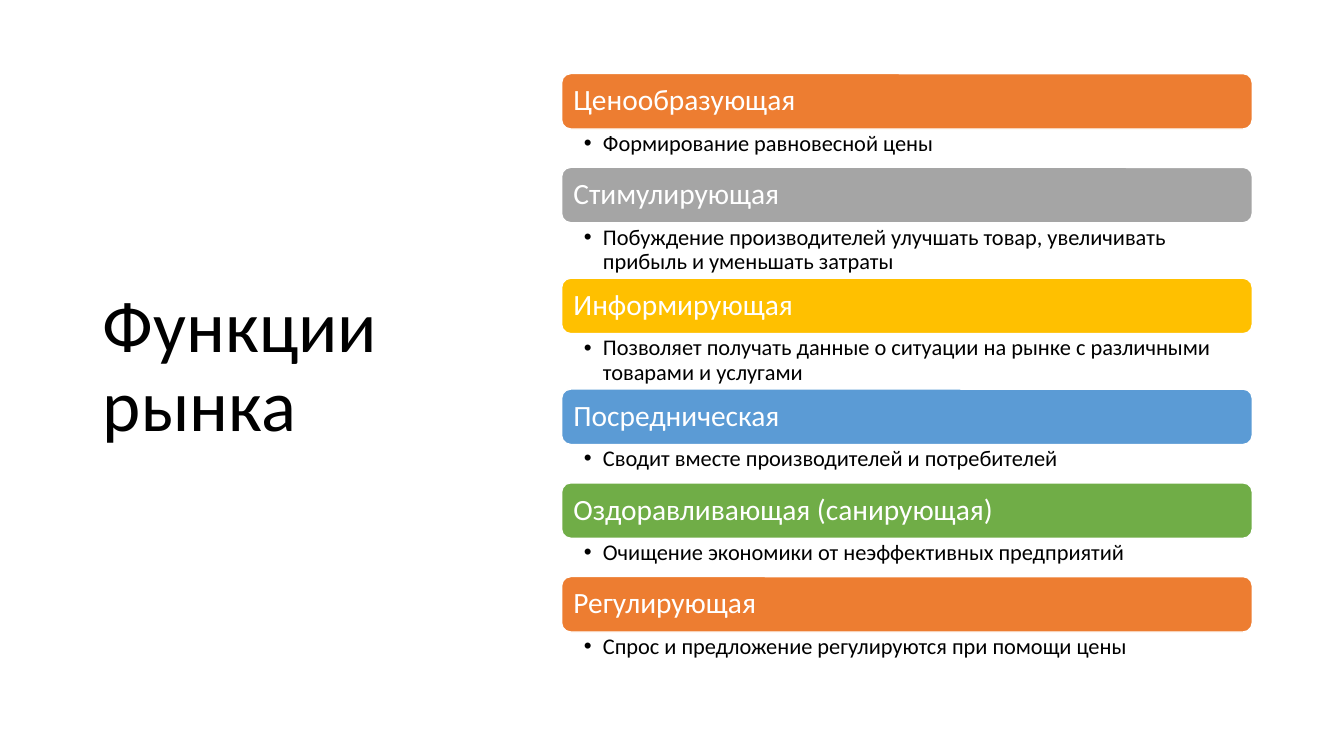
from lxml import etree
from pptx import Presentation
from pptx.dml.color import RGBColor
from pptx.enum import shapes, text
from pptx.oxml import ns
from pptx.util import Inches, Pt

COLORS = {
    "orange": "ED7D31", "gray": "A5A5A5", "yellow": "FFC000",
    "blue": "5B9BD5", "green": "70AD47", "white": "FFFFFF", "black": "000000",
}
LEFT, TOP, WIDTH = 5.57, 0.73, 6.85
BAR_HEIGHT = 0.55
DETAIL_HEIGHTS = {1: 0.38, 2: 0.55}  # by number of text lines

# Function of the market, bar colour, explanation, lines it takes
FUNCTIONS = [
    ("Ценообразующая", "orange", "Формирование равновесной цены", 1),
    ("Стимулирующая", "gray",
     "Побуждение производителей улучшать товар, увеличивать прибыль и уменьшать затраты", 2),
    ("Информирующая", "yellow",
     "Позволяет получать данные о ситуации на рынке с различными товарами и услугами", 2),
    ("Посредническая", "blue", "Сводит вместе производителей и потребителей", 1),
    ("Оздоравливающая (санирующая)", "green",
     "Очищение экономики от неэффективных предприятий", 1),
    ("Регулирующая", "orange", "Спрос и предложение регулируются при помощи цены", 1),
]


def color(name):
    return RGBColor.from_string(COLORS[name])


def write(box, words, size, color_name, anchor, margins):
    """Fill a shape with one left-aligned paragraph and return it."""
    frame = box.text_frame
    left, top, right, bottom = (Inches(margin) for margin in margins)
    frame_format = {
        "word_wrap": True, "auto_size": text.MSO_AUTO_SIZE.NONE,
        "vertical_anchor": anchor, "margin_left": left, "margin_top": top,
        "margin_right": right, "margin_bottom": bottom,
    }
    for name, value in frame_format.items():
        setattr(frame, name, value)
    para = frame.paragraphs[0]
    para.alignment = text.PP_ALIGN.LEFT
    para.line_spacing = 0.9
    span = para.add_run()
    span.text = words
    for name, value in {"name": "Calibri", "size": Pt(size)}.items():
        setattr(span.font, name, value)
    span.font.color.rgb = color(color_name)
    return para


def add_title(page, words):
    title = page.shapes.title
    place = {"left": 0.92, "top": 0.61, "width": 3.69, "height": 6.09}
    for name, value in place.items():
        setattr(title, name, Inches(value))
    write(title, words, 52, "black", text.MSO_ANCHOR.MIDDLE, (0.1, 0.05, 0.1, 0.05))


def add_bar(page, top, words, color_name):
    bar = page.shapes.add_shape(
        shapes.MSO_SHAPE.ROUNDED_RECTANGLE,
        Inches(LEFT), Inches(top), Inches(WIDTH), Inches(BAR_HEIGHT))
    bar.shadow.inherit = False
    bar.fill.solid()
    bar.fill.fore_color.rgb = color(color_name)
    bar.line.color.rgb = color("white")
    bar.line.width = Pt(1)
    write(bar, words, 21, "white", text.MSO_ANCHOR.MIDDLE, (0.09,) * 4)


def add_detail(page, top, height, words):
    box = page.shapes.add_textbox(
        Inches(LEFT), Inches(top), Inches(WIDTH), Inches(height))
    para = write(box, words, 16, "black", text.MSO_ANCHOR.TOP, (0.22, 0.03, 0.16, 0.03))
    para.level = 1
    # Hanging bullet
    properties = para._p.get_or_add_pPr()
    properties.set("marL", str(Inches(0.19)))
    properties.set("indent", str(-Inches(0.19)))
    etree.SubElement(properties, ns.qn("a:buFont")).set("typeface", "Arial")
    etree.SubElement(properties, ns.qn("a:buChar")).set("char", "•")


def main():
    deck = Presentation()
    deck.slide_width, deck.slide_height = Inches(13.33), Inches(7.5)
    page = deck.slides.add_slide(deck.slide_layouts.get_by_name("Title Only"))
    add_title(page, "Функции рынка")

    # Stack each bar and its explanation down the right side
    top = TOP
    for name, color_name, detail, lines in FUNCTIONS:
        add_bar(page, top, name, color_name)
        top += BAR_HEIGHT
        add_detail(page, top, DETAIL_HEIGHTS[lines], detail)
        top += DETAIL_HEIGHTS[lines]

    deck.save("out.pptx")


if __name__ == "__main__":
    main()
